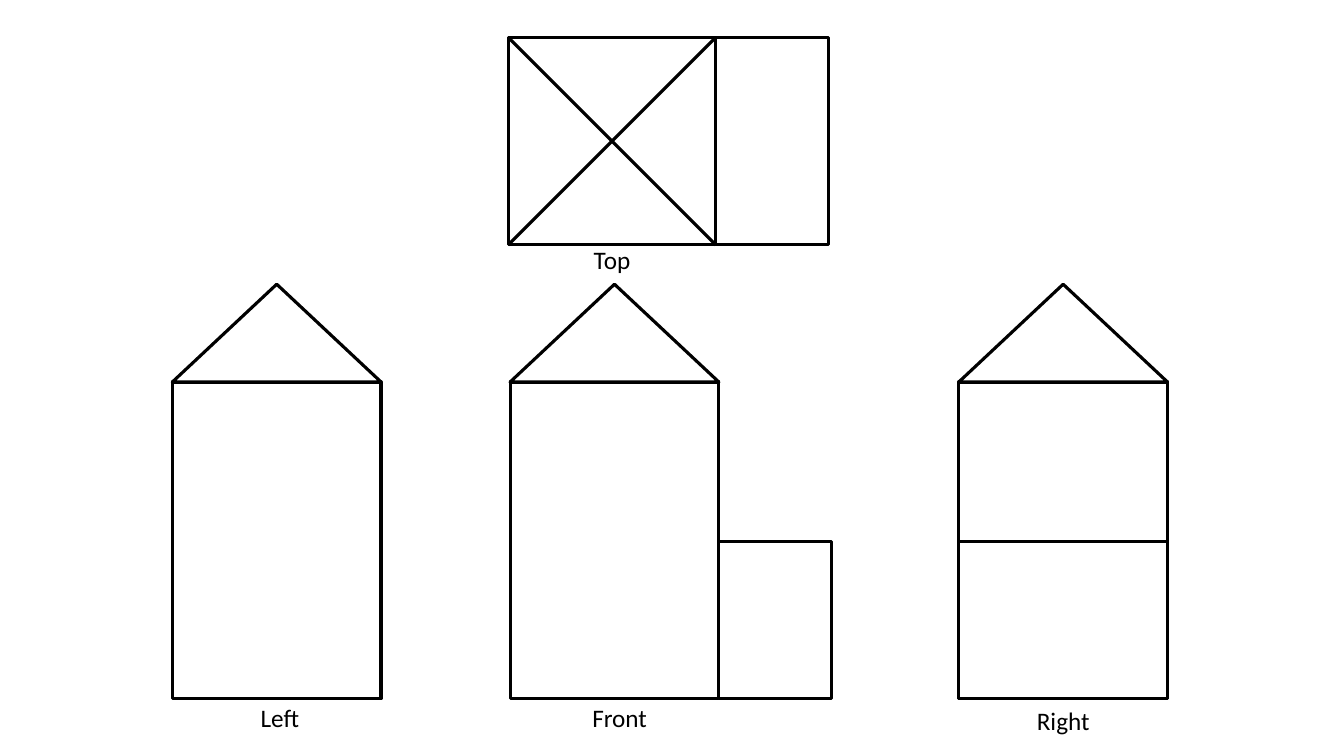
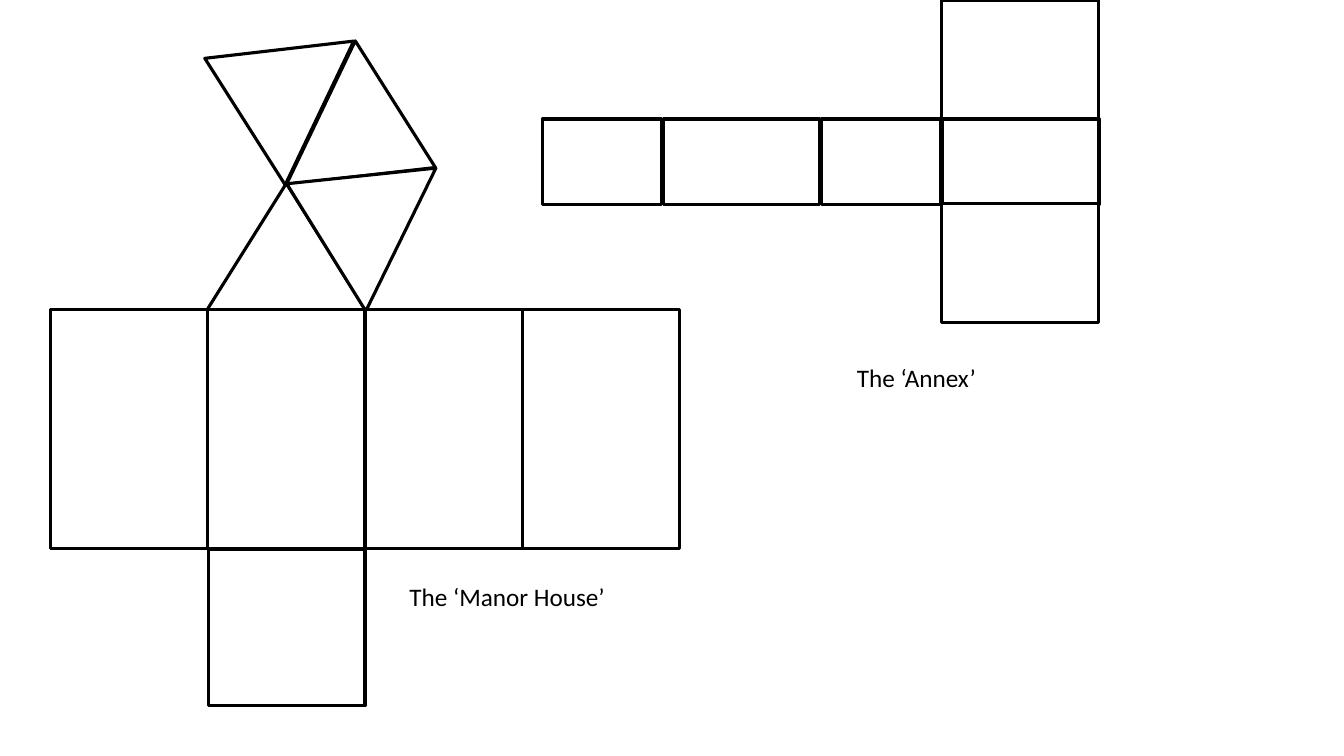
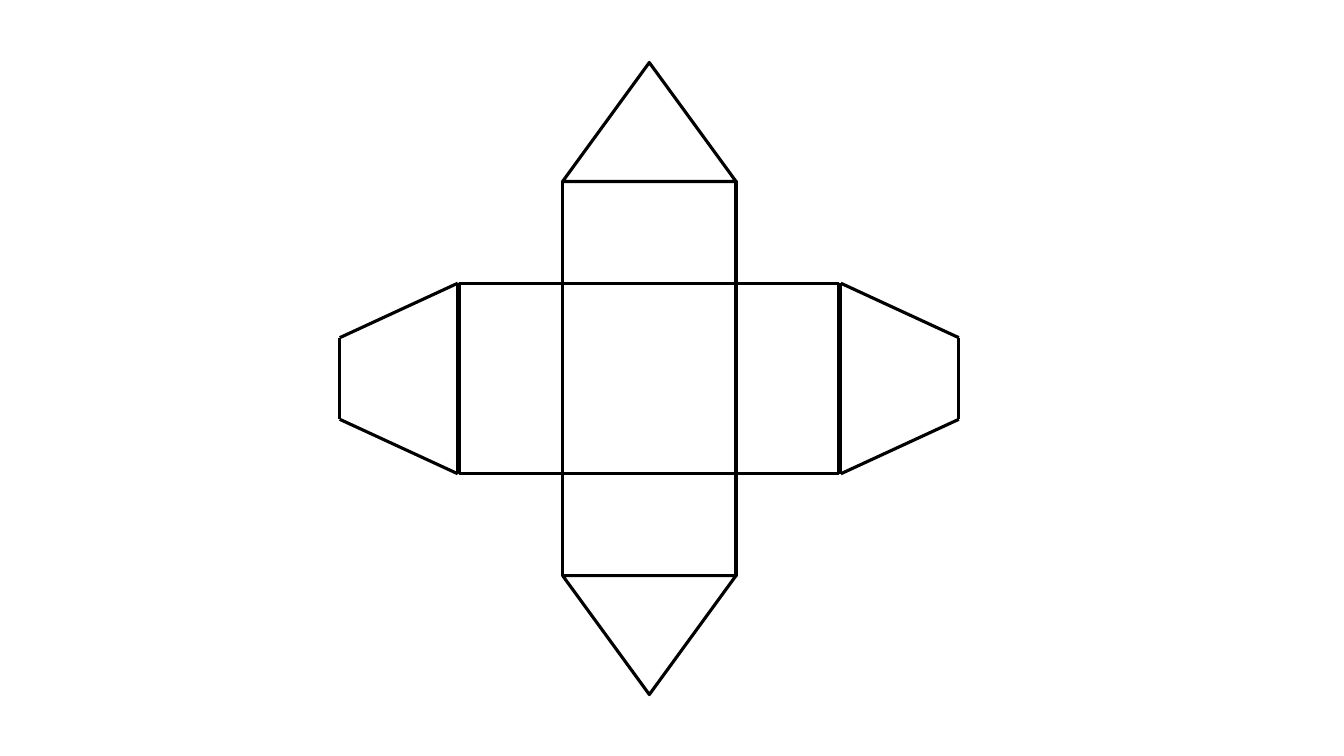
from lxml.etree import SubElement
from pptx import Presentation
from pptx.dml.color import RGBColor
from pptx.enum.shapes import MSO_CONNECTOR, MSO_SHAPE
from pptx.enum.text import MSO_AUTO_SIZE, PP_ALIGN
from pptx.oxml.ns import qn
from pptx.util import Inches, Pt

INK, PAPER, FONT = "000000", "FFFFFF", "Calibri"
LINE_PT, TEXT_PT = 2.25, 18
RECT, TRIANGLE = MSO_SHAPE.RECTANGLE, MSO_SHAPE.ISOSCELES_TRIANGLE

# Slide 1: elevations of the house
TOWER_W, TOWER_H, ROOF_H = 2.07, 3.14, 0.97
TOWER_TOP = 3.79
PLAN_X, PLAN_Y, PLAN_SIDE = 5.04, 0.37, 2.06
ANNEX_W, ANNEX_H = 1.12, 1.56
ELEVATIONS = {"Front": 5.06, "Right": 9.51, "Left": 1.71}
VIEW_LABELS = [
    ("Top", 5.74, 2.37, 0.66),
    ("Right", 10.14, 6.95, 0.81),
    ("Left", 2.37, 6.92, 0.81),
    ("Front", 5.74, 6.92, 0.81),
]

# Slide 2: nets of the two parts
MANOR_X, MANOR_Y, MANOR_W, MANOR_H = 0.5, 3.07, 1.56, 2.37
ROOF_SIZE = (1.58, 1.26)
ROOF_PANELS = [(2.05, 1.82, 0), (2.96, 0.76, 115.6),
               (1.81, 0.22, 295.5), (2.62, 1.47, 296.1)]  # left, top, rotation
STRIP_X, STRIP_Y, STRIP_H, STRIP_GAP = 5.38, 1.18, 0.85, 0.02
STRIP_WIDTHS = [1.18, 1.55, 1.18, 1.55]
LID_X, LID_W, LID_H, LID_TOPS = 9.34, 1.56, 1.18, (0, 2.02)
NET_LABELS = [("The ‘Manor House’", 3.5, 5.72, 3.06),
              ("The ‘Annex’", 7.56, 3.55, 3.06)]

# Slide 3: cross-shaped net
FLOOR_X, FLOOR_Y, FLOOR_W, FLOOR_H = 5.58, 2.81, 1.72, 1.89
FLAP_H, WALL_W, GABLE_H = 1.01, 1.02, 1.18
AXIS = 6.44
WING = [(4.54, 2.81), (3.37, 3.35), (3.37, 4.16), (4.54, 4.7)]


def rgb(hex_text):
    return RGBColor.from_string(hex_text)


def add_panel(group, x, y, w, h, kind=RECT, rotation=0):
    sp = group.shapes.add_shape(kind, Inches(x), Inches(y), Inches(w), Inches(h))
    sp.shadow.inherit = False
    sp.fill.solid()
    sp.fill.fore_color.rgb = rgb(PAPER)
    sp.line.color.rgb = rgb(INK)
    sp.line.width = Pt(LINE_PT)
    sp.rotation = rotation


def add_edge(group, start, end):
    cxn = group.shapes.add_connector(
        MSO_CONNECTOR.STRAIGHT, *[Inches(v) for v in (*start, *end)])
    cxn.line.color.rgb = rgb(INK)
    cxn.line.width = Pt(LINE_PT)
    SubElement(cxn._element.spPr, qn("a:effectLst"))


def add_label(s, text, x, y, w, h=0.4, size=TEXT_PT, color=INK, align=PP_ALIGN.CENTER):
    tf = s.shapes.add_textbox(Inches(x), Inches(y), Inches(w), Inches(h)).text_frame
    tf.word_wrap = True
    tf.auto_size = MSO_AUTO_SIZE.SHAPE_TO_FIT_TEXT
    p = tf.paragraphs[0]
    p.alignment = align
    r = p.add_run()
    r.text = text
    r.font.name, r.font.size, r.font.color.rgb = FONT, Pt(size), rgb(color)


def build_views(s):
    plan = s.shapes.add_group_shape()
    right, bottom = PLAN_X + PLAN_SIDE, PLAN_Y + PLAN_SIDE
    add_panel(plan, PLAN_X, PLAN_Y, PLAN_SIDE, PLAN_SIDE)
    add_edge(plan, (PLAN_X, PLAN_Y), (right, bottom))
    add_edge(plan, (PLAN_X, bottom), (right, PLAN_Y))
    add_panel(s, right, PLAN_Y, ANNEX_W, PLAN_SIDE)

    annex_y = TOWER_TOP + TOWER_H - ANNEX_H
    annexes = {"Front": (ELEVATIONS["Front"] + TOWER_W, ANNEX_W),
               "Right": (ELEVATIONS["Right"], TOWER_W)}
    for view, x in ELEVATIONS.items():
        house = s.shapes.add_group_shape()
        add_panel(house, x, TOWER_TOP, TOWER_W, TOWER_H)
        add_panel(house, x, TOWER_TOP - ROOF_H, TOWER_W, ROOF_H, TRIANGLE)
        if view in annexes:
            annex_x, annex_w = annexes[view]
            add_panel(house, annex_x, annex_y, annex_w, ANNEX_H)
    for label in VIEW_LABELS:
        add_label(s, *label)


def build_part_nets(s):
    manor = s.shapes.add_group_shape()
    add_panel(manor, MANOR_X + MANOR_W + 0.01, MANOR_Y + MANOR_H + 0.01, 1.55, 1.55)
    for x, y, rotation in ROOF_PANELS:
        add_panel(manor, x, y, *ROOF_SIZE, TRIANGLE, rotation)
    for i in range(4):
        add_panel(manor, MANOR_X + i * MANOR_W, MANOR_Y, MANOR_W, MANOR_H)

    annex = s.shapes.add_group_shape()
    x = STRIP_X
    for w in STRIP_WIDTHS:
        add_panel(annex, x, STRIP_Y, w, STRIP_H)
        x += w + STRIP_GAP
    for y in LID_TOPS:
        add_panel(annex, LID_X, y, LID_W, LID_H)
    for label in NET_LABELS:
        add_label(s, *label)


def build_cross_net(s):
    net = s.shapes.add_group_shape()
    floor_right, floor_bottom = FLOOR_X + FLOOR_W, FLOOR_Y + FLOOR_H
    flap_top = FLOOR_Y - FLAP_H
    add_panel(net, FLOOR_X, flap_top, FLOOR_W, FLAP_H)
    add_panel(net, FLOOR_X, FLOOR_Y, FLOOR_W, FLOOR_H)
    add_panel(net, FLOOR_X, floor_bottom, FLOOR_W, FLAP_H)
    for wall_x in (FLOOR_X - WALL_W, floor_right):
        add_panel(net, wall_x, FLOOR_Y, WALL_W, FLOOR_H)
    mirrored = [(2 * AXIS - x, y) for x, y in WING]
    for wing in (WING, mirrored):
        for start, end in zip(wing, wing[1:] + wing[:1]):
            add_edge(net, start, end)
    add_panel(net, FLOOR_X, flap_top - GABLE_H, FLOOR_W, GABLE_H, TRIANGLE)
    add_panel(net, FLOOR_X, floor_bottom + FLAP_H, FLOOR_W, GABLE_H, TRIANGLE, 180)


def main():
    prs = Presentation()
    prs.slide_width, prs.slide_height = Inches(13.33), Inches(7.5)
    blank = prs.slide_layouts[6]
    for build in (build_views, build_part_nets, build_cross_net):
        build(prs.slides.add_slide(blank))
    prs.save("out.pptx")


if __name__ == "__main__":
    main()
